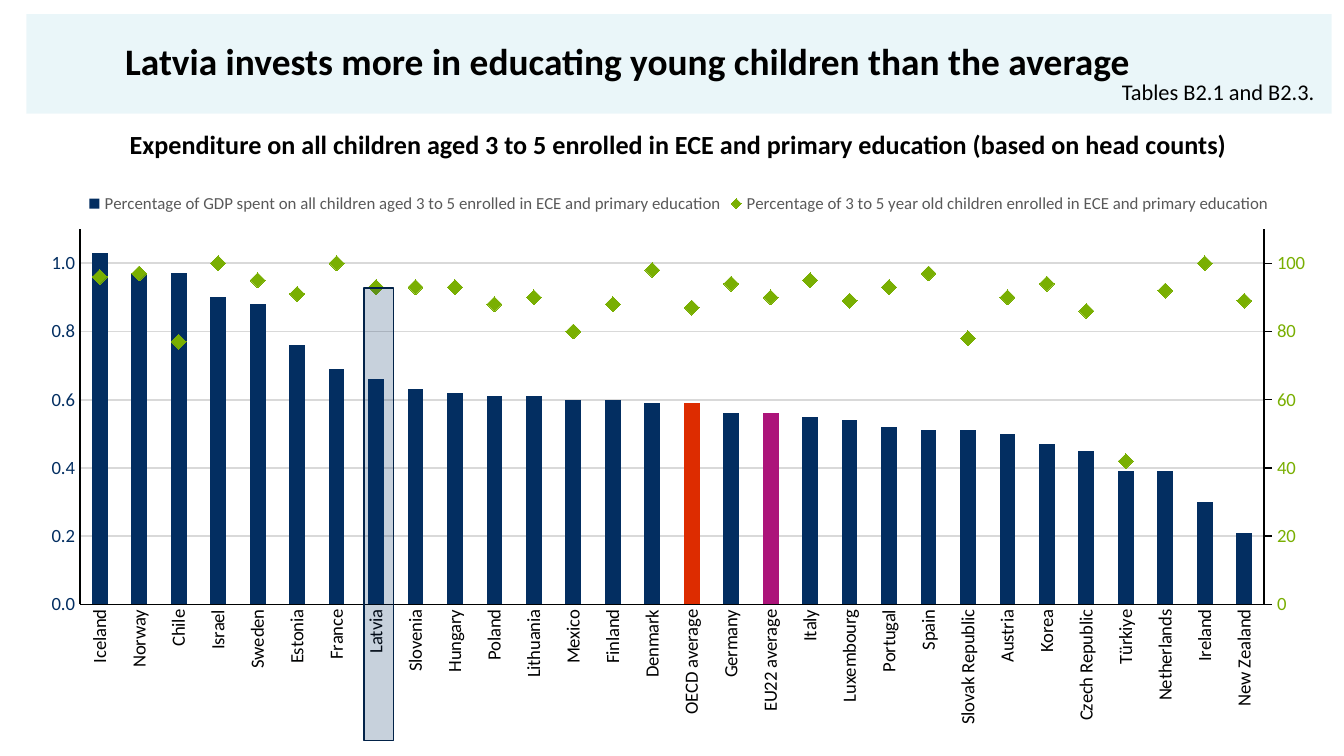
from lxml.etree import SubElement
from pptx import Presentation
from pptx.chart.axis import ValueAxis
from pptx.chart.data import CategoryChartData
from pptx.dml.color import RGBColor
from pptx.enum.chart import XL_CHART_TYPE, XL_LEGEND_POSITION, XL_MARKER_STYLE, XL_TICK_MARK
from pptx.enum.shapes import MSO_SHAPE
from pptx.enum.text import MSO_ANCHOR, MSO_AUTO_SIZE, PP_ALIGN
from pptx.oxml import parse_xml
from pptx.oxml.ns import nsdecls, qn
from pptx.util import Cm, Pt

FONT = "Calibri"
NAVY = "032E61"
GREEN = "79AF02"
BLACK = "000101"
HIGHLIGHTS = {"OECD average": "DD2C00", "EU22 average": "AC147A"}
SPENDING = "Percentage of GDP spent on all children aged 3 to 5 enrolled in ECE and primary education"
ENROLMENT = "Percentage of 3 to 5 year old children enrolled in ECE and primary education"
COUNTRIES = [
    ("Iceland", 1.03, 96), ("Norway", 0.97, 97), ("Chile", 0.97, 77),
    ("Israel", 0.9, 100), ("Sweden", 0.88, 95), ("Estonia", 0.76, 91),
    ("France", 0.69, 100), ("Latvia", 0.66, 93), ("Slovenia", 0.63, 93),
    ("Hungary", 0.62, 93), ("Poland", 0.61, 88), ("Lithuania", 0.61, 90),
    ("Mexico", 0.6, 80), ("Finland", 0.6, 88), ("Denmark", 0.59, 98),
    ("OECD average", 0.59, 87), ("Germany", 0.56, 94), ("EU22 average", 0.56, 90),
    ("Italy", 0.55, 95), ("Luxembourg", 0.54, 89), ("Portugal", 0.52, 93),
    ("Spain", 0.51, 97), ("Slovak Republic", 0.51, 78), ("Austria", 0.5, 90),
    ("Korea", 0.47, 94), ("Czech Republic", 0.45, 86), ("Türkiye", 0.39, 42),
    ("Netherlands", 0.39, 92), ("Ireland", 0.3, 100), ("New Zealand", 0.21, 89),
]


def rgb(color):
    return RGBColor.from_string(color)


def set_font(font, size, color, bold=False):
    font.name = FONT
    font.size = Pt(size)
    font.bold = bold
    font.color.rgb = rgb(color)


def set_fill(fill, color):
    fill.solid()
    fill.fore_color.rgb = rgb(color)


def fill_placeholder(sp, box, text, size, align, bold=False, anchor=MSO_ANCHOR.TOP):
    sp.left, sp.top, sp.width, sp.height = (Cm(v) for v in box)
    tf = sp.text_frame
    tf.text = text
    tf.word_wrap = True
    tf.auto_size = MSO_AUTO_SIZE.NONE
    tf.vertical_anchor = anchor
    p = tf.paragraphs[0]
    pPr = p._p.get_or_add_pPr()
    pPr.set("marL", "0")
    pPr.set("indent", "0")
    SubElement(pPr, qn("a:buNone"))
    p.alignment = align
    p.line_spacing = 0.9
    p.space_before = Pt(0)
    set_font(p.runs[0].font, size, "000000", bold)


def add_tinted_box(s, box, color, opacity, line=None):
    sp = s.shapes.add_shape(MSO_SHAPE.RECTANGLE, *(Cm(v) for v in box))
    sp.shadow.inherit = False
    set_fill(sp.fill, color)
    clr = sp._element.spPr.find(qn("a:solidFill"))[0]
    SubElement(clr, qn("a:alpha")).set("val", str(opacity * 1000))
    if line:
        sp.line.color.rgb = rgb(line)
        sp.line.width = Pt(1)
    else:
        sp.line.fill.background()
    return sp


def style_axis(axis, color, tick=XL_TICK_MARK.NONE):
    axis.major_tick_mark = tick
    axis.minor_tick_mark = XL_TICK_MARK.NONE
    axis.format.line.color.rgb = rgb(BLACK)
    axis.format.line.width = Pt(0.75)
    set_font(axis.tick_labels.font, 10, color)


def scale_axis(axis, top, unit, fmt):
    axis.minimum_scale = 0
    axis.maximum_scale = top
    axis.major_unit = unit
    axis.tick_labels.number_format = fmt
    axis.tick_labels.number_format_is_linked = False


def split_to_right_axis(chart):
    area = chart._chartSpace.chart.plotArea
    bars = area.find(qn("c:barChart"))
    ser = bars.findall(qn("c:ser"))[1]
    for flag in ser.findall(qn("c:invertIfNegative")):
        ser.remove(flag)
    line = parse_xml(
        f'<c:lineChart {nsdecls("c")}><c:grouping val="standard"/><c:varyColors val="0"/>'
        '<c:marker val="1"/><c:axId val="5001"/><c:axId val="5002"/></c:lineChart>')
    line.insert(2, ser)
    bars.addnext(line)
    cat_axis = parse_xml(
        f'<c:catAx {nsdecls("c")}><c:axId val="5001"/><c:scaling><c:orientation val="minMax"/></c:scaling>'
        '<c:delete val="1"/><c:axPos val="b"/><c:crossAx val="5002"/><c:crosses val="autoZero"/></c:catAx>')
    val_axis = parse_xml(
        f'<c:valAx {nsdecls("c")}><c:axId val="5002"/><c:scaling><c:orientation val="minMax"/></c:scaling>'
        '<c:delete val="0"/><c:axPos val="r"/><c:tickLblPos val="nextTo"/>'
        '<c:crossAx val="5001"/><c:crosses val="max"/></c:valAx>')
    left_axis = area.find(qn("c:valAx"))
    left_axis.addnext(val_axis)
    val_axis.addnext(cat_axis)
    return ValueAxis(val_axis)


def place_plot(chart, x, y, w, h):
    area = chart._chartSpace.chart.plotArea
    for old in area.findall(qn("c:layout")):
        area.remove(old)
    parts = "".join(f'<c:{k} val="{v}"/>' for k, v in zip("xywh", (x, y, w, h)))
    area.insert(0, parse_xml(
        f'<c:layout {nsdecls("c")}><c:manualLayout><c:layoutTarget val="inner"/>'
        f'<c:xMode val="edge"/><c:yMode val="edge"/>{parts}</c:manualLayout></c:layout>'))


def add_spending_chart(s, box):
    names, spending, enrolment = zip(*COUNTRIES)
    data = CategoryChartData()
    data.categories = names
    data.add_series(SPENDING, spending)
    data.add_series(ENROLMENT, enrolment)
    chart = s.shapes.add_chart(
        XL_CHART_TYPE.COLUMN_CLUSTERED, *(Cm(v) for v in box), data).chart
    set_font(chart.font, 10, "000000")
    chart.has_title = False
    left_axis = chart.value_axis
    right_axis = split_to_right_axis(chart)
    place_plot(chart, 0.04, 0.09, 0.91, 0.67)

    columns, markers = chart.plots
    columns.vary_by_categories = False
    columns.gap_width = 150
    columns.overlap = 100
    bars = columns.series[0]
    bars.invert_if_negative = False
    set_fill(bars.format.fill, NAVY)
    for name, color in HIGHLIGHTS.items():
        set_fill(bars.points[names.index(name)].format.fill, color)

    diamonds = markers.series[0]
    diamonds.smooth = False
    diamonds.format.line.fill.background()
    diamonds.marker.style = XL_MARKER_STYLE.DIAMOND
    diamonds.marker.size = 8
    set_fill(diamonds.marker.format.fill, GREEN)
    diamonds.marker.format.line.fill.background()

    style_axis(chart.category_axis, BLACK)
    chart.category_axis._element.txPr.bodyPr.set("rot", "-5400000")
    style_axis(left_axis, NAVY)
    scale_axis(left_axis, 1.1, 0.2, "#,##0.0")
    grid = left_axis.major_gridlines.format.line
    grid.color.rgb = rgb("D9D9D9")
    grid.width = Pt(1)
    style_axis(right_axis, GREEN, XL_TICK_MARK.OUTSIDE)
    scale_axis(right_axis, 110, 20, "#,##0")

    chart.has_legend = True
    chart.legend.position = XL_LEGEND_POSITION.TOP
    chart.legend.include_in_layout = False
    set_font(chart.legend.font, 9, "595959")


def main():
    prs = Presentation()
    prs.slide_width, prs.slide_height = Cm(25.4), Cm(14.29)
    s = prs.slides.add_slide(prs.slide_layouts[3])
    band = add_tinted_box(s, (0.5, 0.27, 24.67, 1.88), "6FC5D5", 14)
    s.shapes._spTree.insert(2, band._element)
    title, subtitle, tables = s.placeholders
    fill_placeholder(title, (2.11, 0.43, 22.86, 1.55),
                     "Latvia invests more in educating young children than the average",
                     20, PP_ALIGN.LEFT, True, MSO_ANCHOR.MIDDLE)
    fill_placeholder(subtitle, (0.53, 2.36, 24.59, 0.79),
                     "Expenditure on all children aged 3 to 5 enrolled in ECE and primary education "
                     "(based on head counts)", 14, PP_ALIGN.CENTER, True)
    fill_placeholder(tables, (20.6, 1.4, 4.5, 0.58), "Tables B2.1 and B2.3.", 12, PP_ALIGN.RIGHT)
    add_spending_chart(s, (0.53, 3.38, 24.59, 10.59))
    add_tinted_box(s, (6.88, 5.44, 0.56, 8.56), NAVY, 22, "022248")
    prs.save("out.pptx")


if __name__ == "__main__":
    main()
